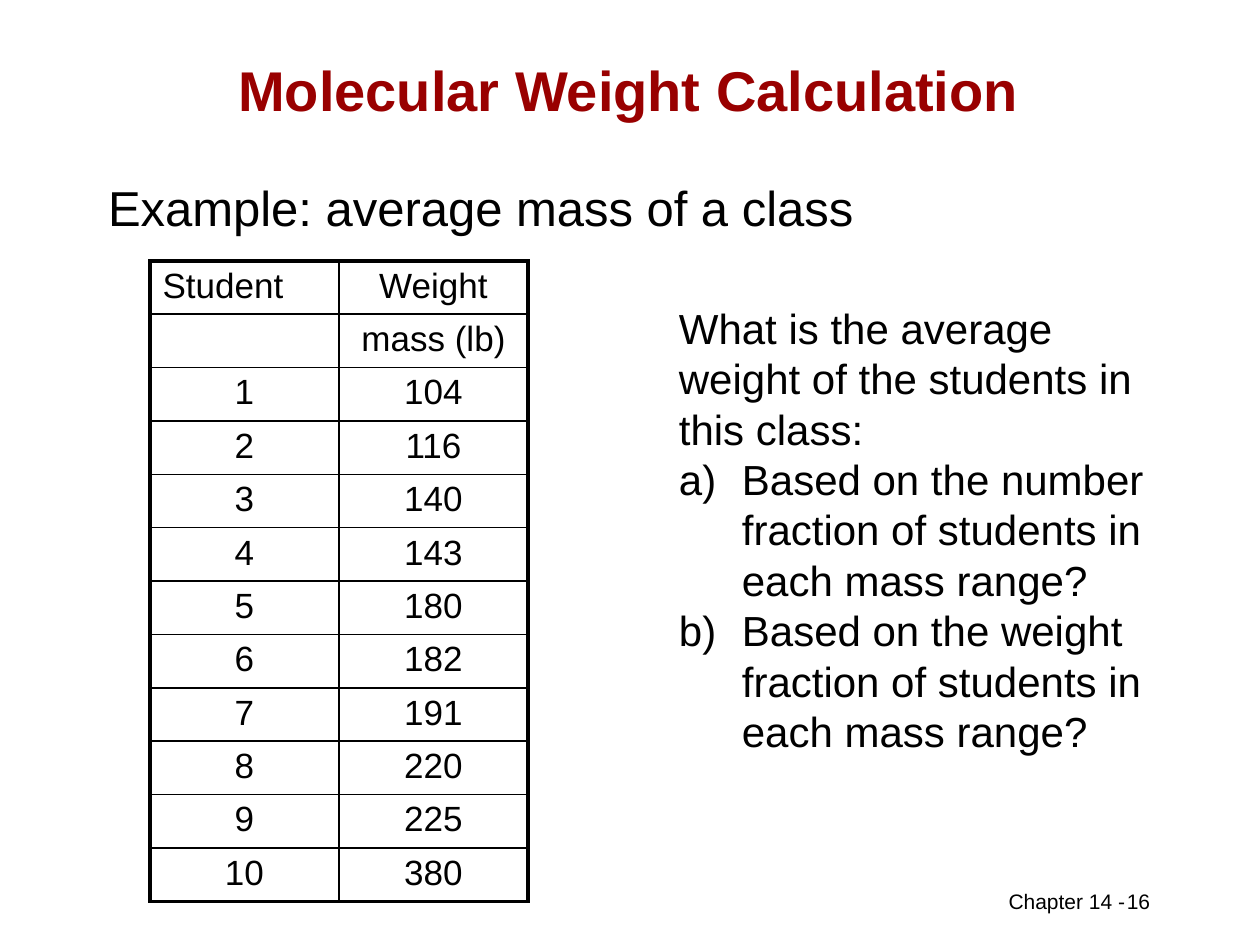
from lxml.etree import SubElement
from pptx import Presentation
from pptx.dml.color import RGBColor
from pptx.enum.text import MSO_ANCHOR, PP_ALIGN
from pptx.oxml.ns import qn
from pptx.util import Inches, Pt

COLORS = {"title": "990000", "text": "000000", "border": "000000"}
FONT = "Arial"
THIN, THICK = 1, 2.25

TABLE_HEADINGS = [("Student", "Weight"), ("", "mass (lb)")]
WEIGHTS = [104, 116, 140, 143, 180, 182, 191, 220, 225, 380]
QUESTION_LINES = ["What is the average", "weight of the students in", "this class:"]
QUESTION_PARTS = [
    "Based on the number fraction of students in each mass range?",
    "Based on the weight fraction of students in each mass range?",
]


def style_paragraph(paragraph, size, color="text", bold=False, align=PP_ALIGN.LEFT):
    paragraph.alignment = align
    paragraph.font.name = FONT
    paragraph.font.size = Pt(size)
    paragraph.font.bold = bold
    paragraph.font.color.rgb = RGBColor.from_string(COLORS[color])


def add_text(slide, left, top, width, height, lines, size, wrap=True,
             anchor=MSO_ANCHOR.TOP, **style):
    """Add a text box with one paragraph per line and return its paragraphs."""
    box = slide.shapes.add_textbox(Inches(left), Inches(top), Inches(width), Inches(height))
    frame = box.text_frame
    frame.word_wrap = wrap
    frame.vertical_anchor = anchor
    frame.text = "\n".join(lines)
    for paragraph in frame.paragraphs:
        style_paragraph(paragraph, size, **style)
    return frame.paragraphs


def add_question(slide):
    lines = QUESTION_LINES + QUESTION_PARTS
    paragraphs = add_text(slide, 5.29, 2.35, 4.2, 3.69, lines, 24)
    for number, paragraph in enumerate(paragraphs):
        properties = paragraph.font._element.getparent()
        properties.set("marL", str(Inches(0.5)))
        properties.set("indent", str(Inches(-0.5)))
        if number >= len(QUESTION_LINES):
            lettering = SubElement(properties, qn("a:buAutoNum"), type="alphaLcParenR")
            properties.insert(0, lettering)


def set_borders(cell, widths):
    """Draw the cell's edges; widths maps L, R, T and B to points."""
    properties = cell._tc.get_or_add_tcPr()
    for side, width in widths.items():
        line = SubElement(properties, qn(f"a:ln{side}"), w=str(Pt(width)))
        fill = SubElement(line, qn("a:solidFill"))
        SubElement(fill, qn("a:srgbClr"), val=COLORS["border"])


def add_weight_table(slide):
    rows = TABLE_HEADINGS + [(str(n), str(w)) for n, w in enumerate(WEIGHTS, 1)]
    row_height, column_width = 0.41, 1.5
    last_row, last_column = len(rows) - 1, len(rows[0]) - 1
    table = slide.shapes.add_table(
        len(rows), len(rows[0]), Inches(1.19), Inches(2.07),
        Inches(column_width * len(rows[0])), Inches(row_height * len(rows))).table
    table.first_row = table.horz_banding = False
    for r, row in enumerate(rows):
        table.rows[r].height = Inches(row_height)
        for c, text in enumerate(row):
            cell = table.cell(r, c)
            cell.text = text
            cell.margin_top = cell.margin_bottom = Inches(0.045)
            align = PP_ALIGN.LEFT if (r, c) == (0, 0) else PP_ALIGN.CENTER
            style_paragraph(cell.text_frame.paragraphs[0], 20, align=align)
            set_borders(cell, {
                "L": THICK if c == 0 else THIN,
                "R": THICK if c == last_column else THIN,
                "T": THICK if r == 0 else THIN,
                "B": THICK if r == last_row else THIN,
            })
            cell.fill.background()


def main():
    deck = Presentation()
    deck.slide_width, deck.slide_height = Inches(10), Inches(7.5)
    slide = deck.slides.add_slide(deck.slide_layouts[6])
    add_text(slide, 7.86, 7, 1.18, 0.3, [" Chapter 14 -"], 12, wrap=False)
    add_text(slide, 8.39, 7, 1.29, 0.39, ["16"], 12, align=PP_ALIGN.CENTER)
    add_text(slide, 0.74, 0.42, 8.5, 0.58, ["Molecular Weight Calculation"], 32,
             anchor=MSO_ANCHOR.MIDDLE, color="title", bold=True, align=PP_ALIGN.CENTER)
    add_text(slide, 0.76, 1.36, 8.5, 0.7, ["Example: average mass of a class"], 28)
    add_weight_table(slide)
    add_question(slide)
    deck.save("out.pptx")


if __name__ == "__main__":
    main()
